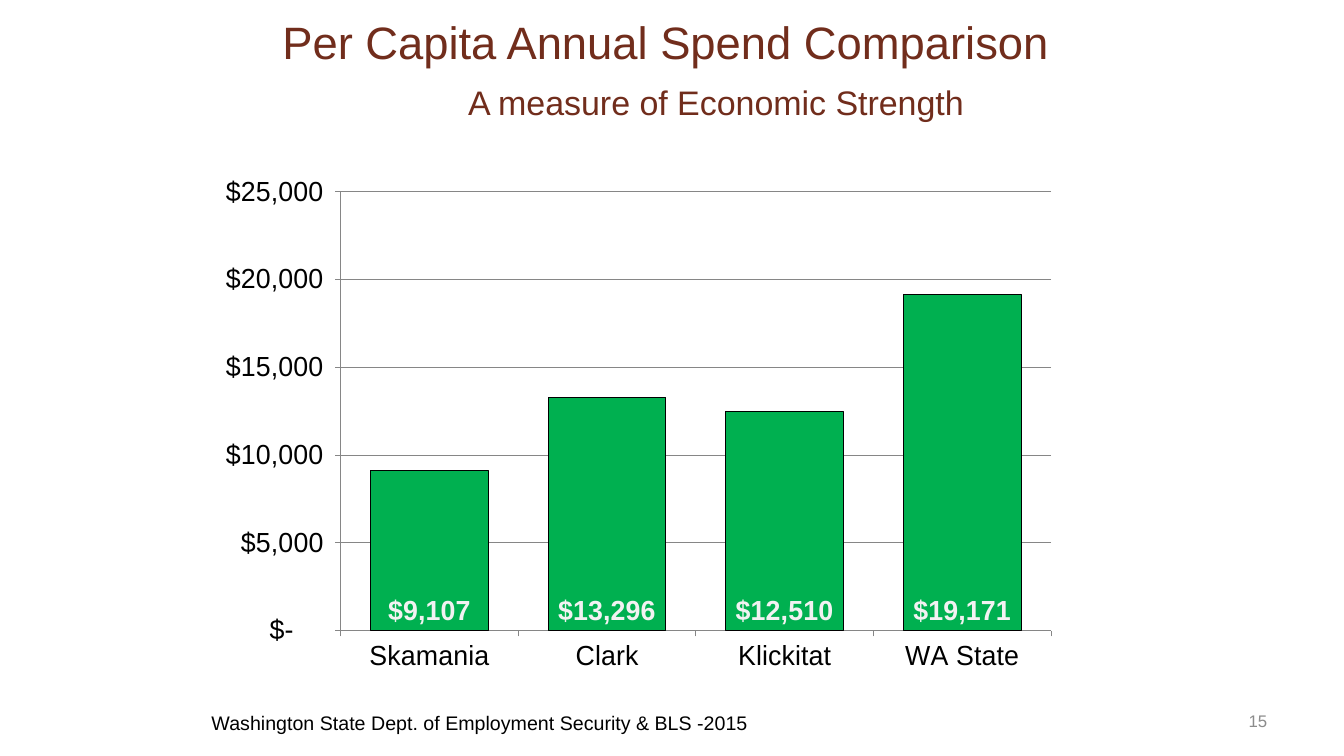
import pptx
import pptx.util
import pptx.chart.data
import pptx.dml.color
import pptx.enum.chart
import pptx.enum.text
import pptx.oxml

Pt = pptx.util.Pt
RGB = pptx.dml.color.RGBColor
Align = pptx.enum.text.PP_ALIGN
Anchor = pptx.enum.text.MSO_ANCHOR
Mark = pptx.enum.chart.XL_TICK_MARK

BROWN = RGB(0x71, 0x2D, 0x1C)
GREEN = RGB(0x00, 0xB0, 0x50)
BLACK = RGB(0x00, 0x00, 0x00)
PALE = RGB(0xF2, 0xF2, 0xF2)
GRAY = RGB(0x8C, 0x8C, 0x8C)
RULE = RGB(0x86, 0x86, 0x86)
MONEY = '_("$"* #,##0_);_("$"* \\(#,##0\\);_("$"* "-"??_);_(@_)'


def apply(item, form):
    for key, value in form.items():
        setattr(item, key, value)


def style(font, size, color, bold=False):
    apply(font, {"name": "Arial", "size": Pt(size), "bold": bold})
    font.color.rgb = color


deck = pptx.Presentation()
apply(deck, {"slide_width": Pt(960), "slide_height": Pt(540)})
slide = deck.slides.add_slide(deck.slide_layouts[5])

title = slide.shapes.title
apply(title, {"left": Pt(48), "top": Pt(21.6), "width": Pt(864), "height": Pt(90)})
frame = title.text_frame
apply(frame, {
    "word_wrap": True,
    "auto_size": pptx.enum.text.MSO_AUTO_SIZE.NONE,
    "vertical_anchor": Anchor.MIDDLE,
    "margin_top": 0,
    "margin_bottom": Pt(35.8),
    "margin_right": Pt(16.2),
})
frame.text = "Per Capita Annual Spend Comparison\nA measure of Economic Strength"
head, sub = frame.paragraphs
for line, size in ((head, 32.4), (sub, 24.3)):
    line.alignment = Align.CENTER
    style(line.font, size, BROWN)
sub.space_before = Pt(9.5)
sub._p.get_or_add_pPr().set("marL", str(Pt(72)))

data = pptx.chart.data.CategoryChartData(number_format=MONEY)
data.categories = ["Skamania", "Clark", "Klickitat", "WA State"]
data.add_series("Series 1", (9107, 13296, 12510, 19171))
chart = slide.shapes.add_chart(
    pptx.enum.chart.XL_CHART_TYPE.COLUMN_CLUSTERED,
    Pt(156), Pt(126), Pt(648), Pt(356.4), data).chart
apply(chart, {"has_legend": False, "has_title": False})
style(chart.font, 10, BLACK)

value = chart.value_axis
apply(value, {
    "minimum_scale": 0,
    "maximum_scale": 25000,
    "major_unit": 5000,
    "has_major_gridlines": True,
})
apply(value.tick_labels, {"number_format": MONEY, "number_format_is_linked": False})
for axis in (value, chart.category_axis):
    apply(axis, {"major_tick_mark": Mark.OUTSIDE, "minor_tick_mark": Mark.NONE})
    style(axis.tick_labels.font, 20, BLACK)
for rule in (value.format.line, chart.category_axis.format.line,
             value.major_gridlines.format.line):
    rule.color.rgb = RULE
    rule.width = Pt(0.75)

plot = chart.plots[0]
apply(plot, {"gap_width": 51, "vary_by_categories": False, "has_data_labels": True})
apply(plot.data_labels, {
    "show_value": True,
    "number_format": MONEY,
    "number_format_is_linked": False,
    "position": pptx.enum.chart.XL_LABEL_POSITION.INSIDE_BASE,
})
style(plot.data_labels.font, 20, PALE, True)
bars = plot.series[0].format
bars.fill.solid()
bars.fill.fore_color.rgb = GREEN
bars.line.color.rgb = BLACK
bars.line.width = Pt(0.75)

area = chart._chartSpace.chart.plotArea
for old in area.findall(pptx.oxml.ns.qn("c:layout")):
    area.remove(old)
parts = "".join(f'<c:{tag} val="{val}"/>' for tag, val in (
    ("layoutTarget", "inner"), ("xMode", "edge"), ("yMode", "edge"),
    ("x", 0.094), ("y", 0.017), ("w", 0.82), ("h", 0.892)))
area.insert(0, pptx.oxml.parse_xml(
    f'<c:layout {pptx.oxml.ns.nsdecls("c")}>'
    f'<c:manualLayout>{parts}</c:manualLayout></c:layout>'))

for text, left, top, width, height, size, color, align, anchor in (
    ("15", 688.3, 500.4, 223.9, 28.8, 12, GRAY, Align.RIGHT, Anchor.MIDDLE),
    ("Washington State Dept. of Employment Security & BLS -2015",
     144, 504, 432, 24.5, 14, BLACK, Align.LEFT, Anchor.TOP),
):
    box = slide.shapes.add_textbox(Pt(left), Pt(top), Pt(width), Pt(height))
    apply(box.text_frame, {"word_wrap": True, "vertical_anchor": anchor, "text": text})
    note = box.text_frame.paragraphs[0]
    note.alignment = align
    style(note.font, size, color)

deck.save("out.pptx")
